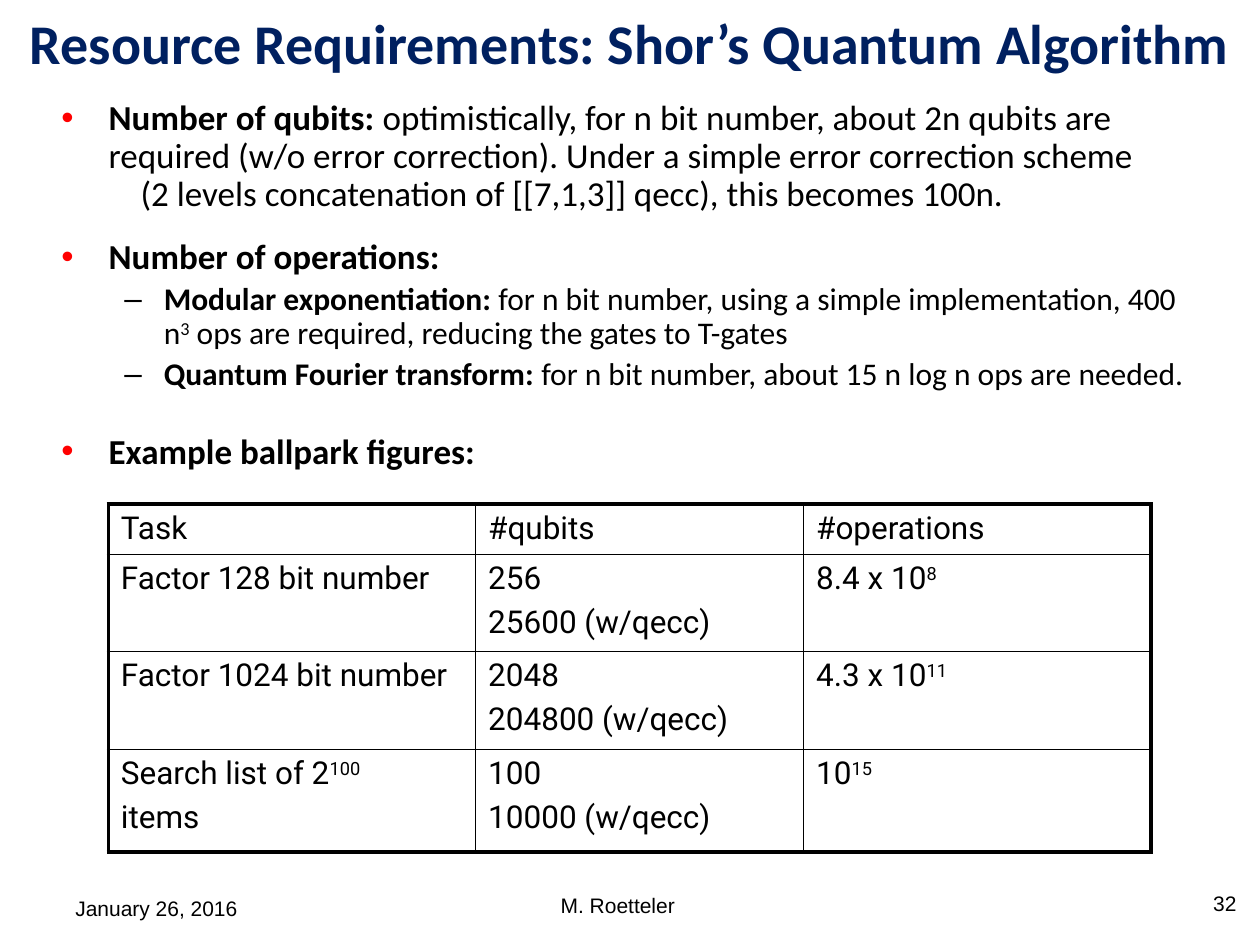
from lxml import etree
from pptx import Presentation
from pptx.dml.color import RGBColor
from pptx.enum.text import MSO_ANCHOR as Anchor, MSO_AUTO_SIZE as AutoSize, PP_ALIGN as Align
from pptx.oxml import parse_xml
from pptx.oxml.ns import nsdecls, qn
from pptx.util import Pt

NAVY = RGBColor(0x00, 0x20, 0x60)
BLACK = RGBColor(0, 0, 0)
RED = RGBColor(0xFF, 0, 0)
THIN, THICK = 1, 2.25

# Text between carets is raised
TABLE_ROWS = [
    ["Task", "#qubits", "#operations"],
    ["Factor 128 bit number", "256\n25600 (w/qecc)", "8.4 x 10^8^"],
    ["Factor 1024 bit number", "2048\n204800 (w/qecc)", "4.3 x 10^11^"],
    ["Search list of 2^100^\nitems", "100\n10000 (w/qecc)", "10^15^"],
]
COLUMN_WIDTHS = [209.9, 187.4, 198.5]
ROW_HEIGHTS = [28.6, 55.4, 56, 58.7]


def style_font(font, name, size, color=BLACK, bold=False):
    font.name, font.size, font.bold = name, Pt(size), bold
    font.color.rgb = color


def add_spans(para, text, name, size, bold=False):
    """Add text to a paragraph, raising the parts between carets."""
    for index, part in enumerate(text.split("^")):
        if part:
            span = para.add_run()
            span.text = part
            style_font(span.font, name, size, bold=bold)
            if index % 2:
                span.font._element.set("baseline", "30000")


def set_bullet(para, margin, indent, mark=None, color=None):
    props = para._p.get_or_add_pPr()
    props.set("marL", str(Pt(margin)))
    props.set("indent", str(Pt(indent)))
    if mark is None:
        etree.SubElement(props, qn("a:buNone"))
        return
    if color is not None:
        holder = etree.SubElement(props, qn("a:buClr"))
        etree.SubElement(holder, qn("a:srgbClr"), val=str(color))
    etree.SubElement(props, qn("a:buFont"), typeface="Arial")
    etree.SubElement(props, qn("a:buChar"), char=mark)


def add_title(page, left, top, width, height):
    title = page.shapes.title
    title.left, title.top, title.width, title.height = map(Pt, (left, top, width, height))
    frame = title.text_frame
    frame.text = "Resource Requirements: Shor’s Quantum Algorithm"
    frame.auto_size = AutoSize.NONE
    frame.vertical_anchor = Anchor.MIDDLE
    para = frame.paragraphs[0]
    para.alignment = Align.CENTER
    style_font(para.runs[0].font, "Calibri", 32, NAVY, True)


def add_body(page, left, top, width, height):
    top_level = (20, 27, -27, "•", RED)
    continued = (20, 45.3, 0, None, None)
    sub_level = (18, 58.5, -22.5, "–", None)
    # Level, space before, bold lead, plain text
    items = [
        (top_level, 0, "Number of qubits: ",
         "optimistically, for n bit number, about 2n qubits are required "
         "(w/o error correction). Under a simple error correction scheme"),
        (continued, 0, "", "(2 levels concatenation of [[7,1,3]] qecc), this becomes 100n."),
        (top_level, 14.5, "Number of operations:", ""),
        (sub_level, 3.6, "Modular exponentiation: ",
         "for n bit number, using a simple implementation, 400 n^3^ ops are required, "
         "reducing the gates to T-gates"),
        (sub_level, 3.6, "Quantum Fourier transform: ",
         "for n bit number, about 15 n log n ops are needed."),
        (top_level, 24, "Example ballpark figures:", ""),
    ]
    box = page.shapes.add_textbox(Pt(left), Pt(top), Pt(width), Pt(height))
    frame = box.text_frame
    frame.word_wrap = True
    for index, (level, space, lead, text) in enumerate(items):
        para = frame.add_paragraph() if index else frame.paragraphs[0]
        size, margin, indent, mark, color = level
        para.line_spacing = 0.9
        para.space_before = Pt(space)
        set_bullet(para, margin, indent, mark, color)
        add_spans(para, lead, "Calibri", size, bold=True)
        add_spans(para, text, "Calibri", size)


def set_borders(cell, widths):
    props = cell._tc.get_or_add_tcPr()
    for index, (side, width) in enumerate(zip("LRTB", widths)):
        props.insert(index, parse_xml(
            f'<a:ln{side} {nsdecls("a")} w="{Pt(width)}"><a:solidFill>'
            f'<a:srgbClr val="{BLACK}"/></a:solidFill></a:ln{side}>'))


def add_figures_table(page, left, top):
    row_count, column_count = len(TABLE_ROWS), len(COLUMN_WIDTHS)
    table = page.shapes.add_table(
        row_count, column_count, Pt(left), Pt(top),
        Pt(sum(COLUMN_WIDTHS)), Pt(sum(ROW_HEIGHTS))).table
    table.first_row = table.horz_banding = False
    for column, width in zip(table.columns, COLUMN_WIDTHS):
        column.width = Pt(width)
    for r, (row, height) in enumerate(zip(table.rows, ROW_HEIGHTS)):
        row.height = Pt(height)
        for c, cell in enumerate(row.cells):
            cell.fill.background()
            # Thick lines on the outer edge only
            outer = (c == 0, c == column_count - 1, r == 0, r == row_count - 1)
            set_borders(cell, [THICK if edge else THIN for edge in outer])
            for index, line in enumerate(TABLE_ROWS[r][c].split("\n")):
                frame = cell.text_frame
                para = frame.add_paragraph() if index else frame.paragraphs[0]
                para.space_before = Pt(3.6 if index else 0)
                add_spans(para, line, "Roboto", 18)


def add_footer_text(page, text, alignment, left, top, width, height):
    box = page.shapes.add_textbox(Pt(left), Pt(top), Pt(width), Pt(height))
    frame = box.text_frame
    frame.text = text
    frame.word_wrap = True
    frame.vertical_anchor = Anchor.MIDDLE
    para = frame.paragraphs[0]
    para.alignment = alignment
    style_font(para.runs[0].font, "Arial", 12)


def main():
    deck = Presentation()
    deck.slide_width, deck.slide_height = Pt(720), Pt(540)
    page = deck.slides.add_slide(deck.slide_layouts[5])
    # The title spans the slide, so its text keeps equal side margins
    add_title(page, 0, 0, 720, 48.2)
    add_body(page, 28, 54, 662.4, 411)
    add_figures_table(page, 61.9, 288)
    # Footer
    add_footer_text(page, "January 26, 2016", Align.LEFT, 36, 508.3, 167.8, 20.9)
    add_footer_text(page, "M. Roetteler", Align.CENTER, 239, 506.9, 228.2, 20.9)
    add_footer_text(page, "32", Align.RIGHT, 563.8, 504, 149.8, 23.8)
    deck.save("out.pptx")


if __name__ == "__main__":
    main()
